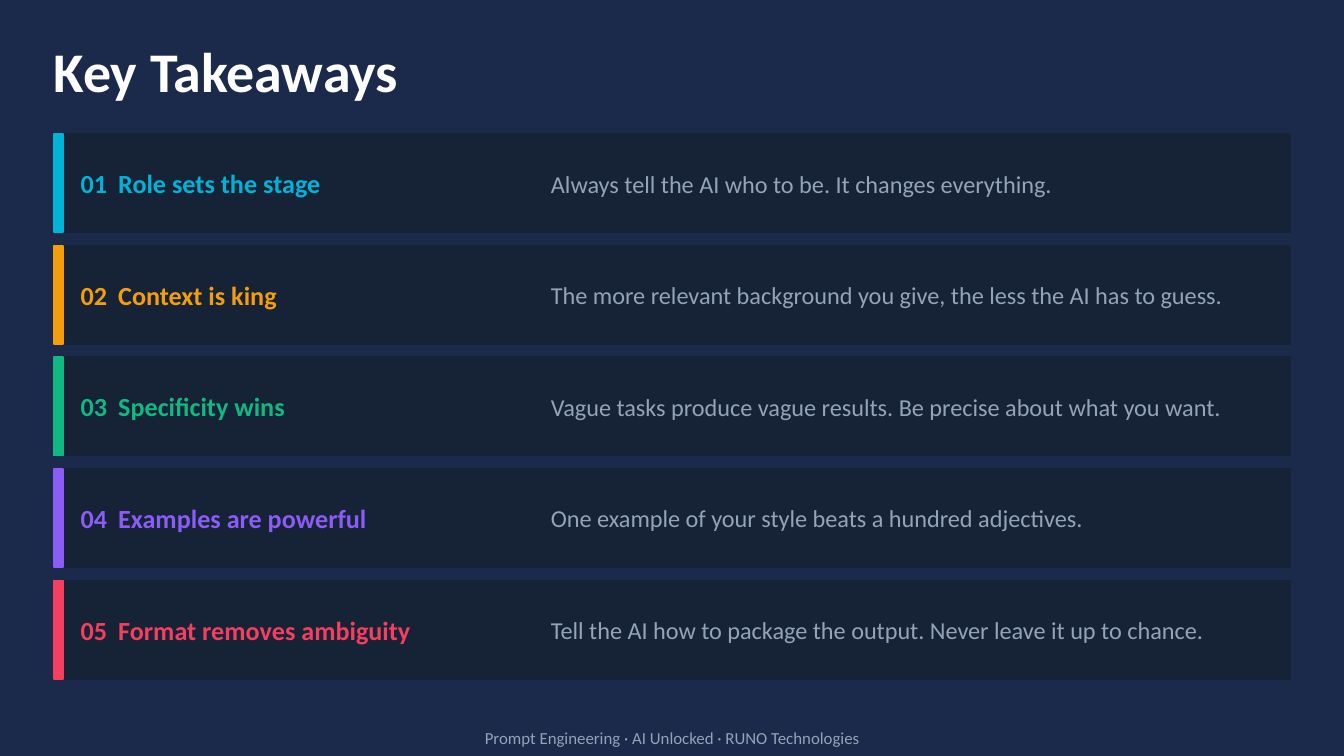
from lxml import etree
from pptx import Presentation
from pptx import util as u
from pptx.dml.color import RGBColor
from pptx.enum import shapes, text
from pptx.oxml.ns import qn

NAVY, CARD, MUTED, WHITE = "1B2A4A", "162236", "94A3B8", "FFFFFF"
SLIDE_WIDTH = 10
SLIDE_HEIGHT = SLIDE_WIDTH * 9 / 16
MARGIN, CONTENT_WIDTH = 0.4, 9.2
ROW_TOP, ROW_HEIGHT, ROW_GAP = 1, 0.73, 0.1
TAKEAWAYS = [
    ("Role sets the stage", "Always tell the AI who to be. It changes everything.", "00B4D8"),
    ("Context is king", "The more relevant background you give, the less the AI has to guess.", "F59E0B"),
    ("Specificity wins", "Vague tasks produce vague results. Be precise about what you want.", "10B981"),
    ("Examples are powerful", "One example of your style beats a hundred adjectives.", "8B5CF6"),
    ("Format removes ambiguity", "Tell the AI how to package the output. Never leave it up to chance.", "F43F5E"),
]


def color(value):
    return RGBColor.from_string(value)


def write(shape, content, size, fill, bold=False, align=text.PP_ALIGN.LEFT, tab=None):
    frame = shape.text_frame
    frame.word_wrap = True
    frame.auto_size = text.MSO_AUTO_SIZE.NONE
    frame.vertical_anchor = text.MSO_ANCHOR.MIDDLE
    frame.margin_left = frame.margin_top = frame.margin_right = frame.margin_bottom = 0
    paragraph = frame.paragraphs[0]
    paragraph.alignment = align
    if tab:
        stops = etree.SubElement(paragraph._p.get_or_add_pPr(), qn("a:tabLst"))
        etree.SubElement(stops, qn("a:tab"), pos=str(u.Inches(tab)), algn="l")
    run = paragraph.add_run()
    run.text = content
    run.font.name = "Calibri"
    run.font.size = u.Pt(size)
    run.font.bold = bold
    run.font.color.rgb = color(fill)


def add_text(slide, box, content, **style):
    write(slide.shapes.add_textbox(*map(u.Inches, box)), content, **style)


def add_bar(slide, box, fill):
    shape = slide.shapes.add_shape(shapes.MSO_SHAPE.RECTANGLE, *map(u.Inches, box))
    shape.shadow.inherit = False
    shape.fill.solid()
    shape.fill.fore_color.rgb = color(fill)
    shape.line.color.rgb = color(fill)
    shape.line.width = u.Pt(1)


def add_title(slide, box, content):
    title = slide.shapes.title
    title.left, title.top, title.width, title.height = map(u.Inches, box)
    write(title, content, size=30, fill=WHITE, bold=True)


def add_takeaway(slide, box, number, heading, advice, accent):
    left, top, width, height = box
    add_bar(slide, box, CARD)
    add_bar(slide, (left, top, 0.07, height), accent)
    add_text(slide, (left + 0.2, top, 3.5, height), f"{number:02d}\t{heading}",
             size=14, fill=accent, bold=True, tab=0.28)
    add_text(slide, (left + 3.7, top, width - 3.8, height), advice, size=13, fill=MUTED)


def add_footer(slide, box, content):
    add_bar(slide, box, NAVY)
    add_text(slide, box, content, size=9, fill=MUTED, align=text.PP_ALIGN.CENTER)


def main():
    presentation = Presentation()
    presentation.slide_width = u.Inches(SLIDE_WIDTH)
    presentation.slide_height = u.Inches(SLIDE_HEIGHT)
    slide = presentation.slides.add_slide(presentation.slide_layouts[5])
    slide.background.fill.solid()
    slide.background.fill.fore_color.rgb = color(NAVY)

    add_title(slide, (MARGIN, 0.2, CONTENT_WIDTH, 0.65), "Key Takeaways")
    for index, takeaway in enumerate(TAKEAWAYS):
        top = ROW_TOP + index * (ROW_HEIGHT + ROW_GAP)
        add_takeaway(slide, (MARGIN, top, CONTENT_WIDTH, ROW_HEIGHT), index + 1, *takeaway)
    add_footer(slide, (0, 5.35, SLIDE_WIDTH, 0.28),
               "Prompt Engineering · AI Unlocked · RUNO Technologies")

    presentation.save("out.pptx")


if __name__ == "__main__":
    main()
